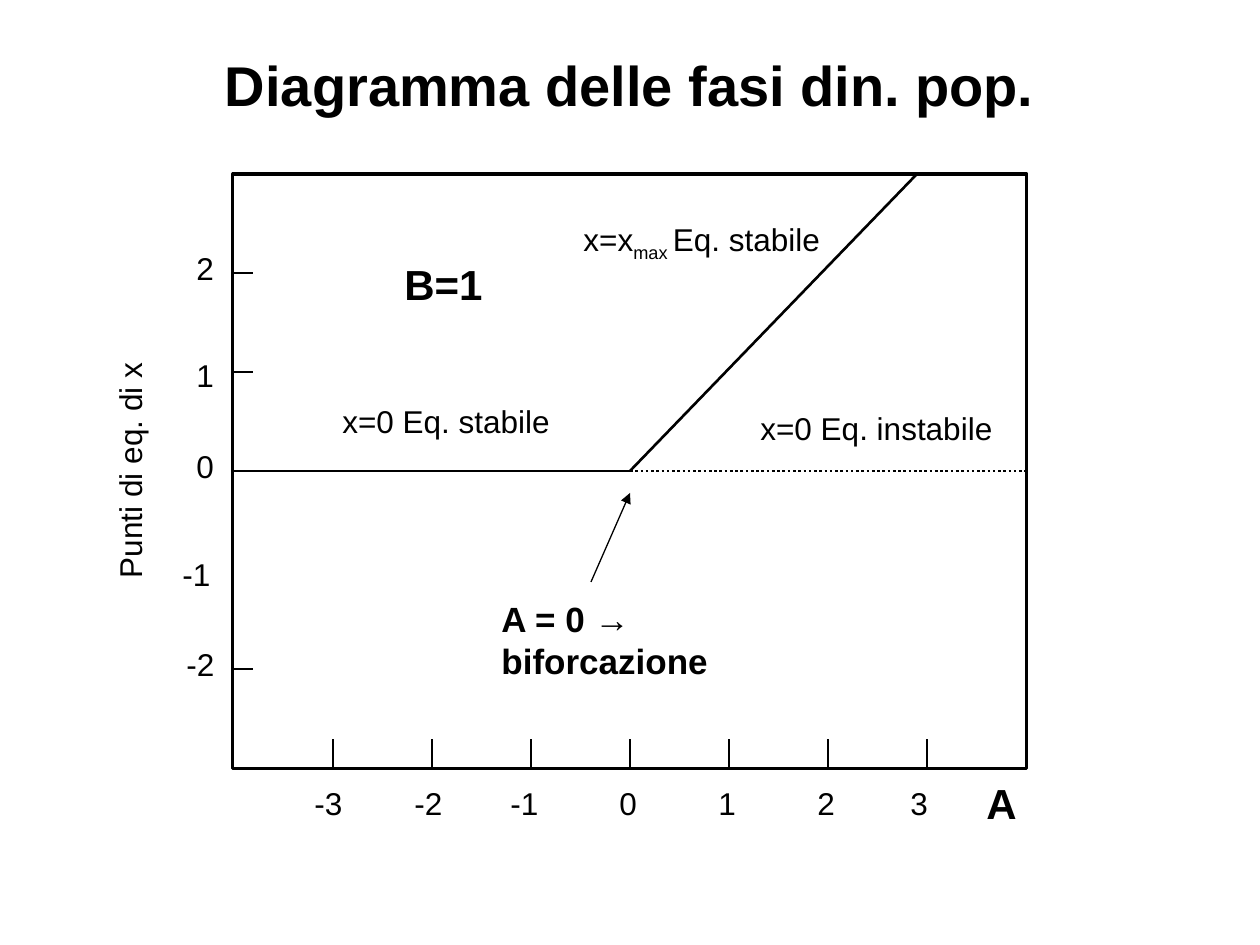
from dataclasses import dataclass

from lxml import etree
from pptx import Presentation
from pptx.dml.color import RGBColor
from pptx.enum import dml, shapes, text
from pptx.oxml.ns import qn
from pptx.util import Emu, Pt

BLACK = RGBColor(0x00, 0x00, 0x00)
FONT = "Arial"
PX = 914400 / 126

LEFT, TOP, RIGHT, BOTTOM = 233, 174, 1027, 769
ORIGIN_X, ORIGIN_Y, UNIT = 630, 471, 99
X_TICK, Y_TICK = 30, 20


@dataclass(frozen=True)
class Label:
    words: str
    x: int
    y: int
    w: int
    h: int = 50
    size: int = 18
    bold: bool = False
    rotation: int = 0
    subscript: str = ""
    rest: str = ""


@dataclass(frozen=True)
class Line:
    x1: int
    y1: int
    x2: int
    y2: int
    width: float = 1.5
    dotted: bool = False
    arrow: bool = False


def px(n: int) -> Emu:
    return Emu(round(n * PX))


def add_run(p, words: str, size: int, bold: bool = False):
    r = p.add_run()
    r.text = words
    r.font.name = FONT
    r.font.size = Pt(size)
    r.font.bold = bold
    r.font.color.rgb = BLACK
    return r


def draw_label(s, label: Label) -> None:
    sp = s.shapes.add_textbox(px(label.x), px(label.y), px(label.w), px(label.h))
    sp.rotation = label.rotation
    tf = sp.text_frame
    tf.word_wrap = False
    tf.auto_size = text.MSO_AUTO_SIZE.SHAPE_TO_FIT_TEXT
    p = tf.paragraphs[0]
    add_run(p, label.words, label.size, label.bold)
    if label.subscript:
        r = add_run(p, label.subscript, label.size, label.bold)
        r.font._element.set("baseline", "-25000")
        add_run(p, label.rest, label.size, label.bold)


def draw_line(s, line: Line) -> None:
    sp = s.shapes.add_connector(
        shapes.MSO_CONNECTOR.STRAIGHT,
        px(line.x1), px(line.y1), px(line.x2), px(line.y2),
    )
    sp.line.color.rgb = BLACK
    sp.line.width = Pt(line.width)
    if line.dotted:
        sp.line.dash_style = dml.MSO_LINE.ROUND_DOT
    if line.arrow:
        etree.SubElement(sp.line._get_or_add_ln(), qn("a:tailEnd"), type="triangle")
    etree.SubElement(sp._element.spPr, qn("a:effectLst"))


def draw_title(s, words: str) -> None:
    sp = s.shapes.title
    sp.left, sp.top, sp.width, sp.height = px(63), px(16), px(1134), px(137)
    tf = sp.text_frame
    tf.vertical_anchor = text.MSO_ANCHOR.MIDDLE
    p = tf.paragraphs[0]
    p.alignment = text.PP_ALIGN.CENTER
    add_run(p, words, 32, True)


def draw_frame(s) -> None:
    sp = s.shapes.add_shape(
        shapes.MSO_SHAPE.RECTANGLE, px(LEFT), px(TOP), px(RIGHT - LEFT), px(BOTTOM - TOP)
    )
    sp.shadow.inherit = False
    sp.fill.background()
    sp.line.color.rgb = BLACK
    sp.line.width = Pt(1.75)


def tick_label(value: int, x: int, y: int) -> Label:
    return Label(str(value), x, y, 53 if value < 0 else 43)


X_LABELS = [
    tick_label(value, x, 778)
    for value, x in zip(range(-3, 4), (302, 402, 498, 607, 706, 805, 898))
]
Y_LABELS = [
    tick_label(2, 184, 243),
    tick_label(1, 184, 350),
    tick_label(0, 184, 441),
    tick_label(-1, 170, 549),
    tick_label(-2, 174, 639),
]
NOTES = [
    Label("B=1", 392, 252, 103, 63, 24, True),
    Label("A", 974, 771, 55, 63, 24, True),
    Label("Punti di eq. di x", 9, 445, 241, rotation=270),
    Label("A = 0 → biforcazione", 489, 591, 369, 54, 20, True),
    Label("x=0 Eq. stabile", 330, 396, 233),
    Label("x=0 Eq. instabile", 748, 403, 257),
    Label("x=x", 571, 214, 273, subscript="max ", rest="Eq. stabile"),
]
X_TICKS = [
    Line(ORIGIN_X + n * UNIT, BOTTOM, ORIGIN_X + n * UNIT, BOTTOM - X_TICK)
    for n in range(-3, 4)
]
Y_TICKS = [
    Line(LEFT, ORIGIN_Y - n * UNIT, LEFT + Y_TICK, ORIGIN_Y - n * UNIT)
    for n in (2, 1, 0, -2)
]
BRANCHES = [
    Line(LEFT, ORIGIN_Y, ORIGIN_X, ORIGIN_Y),
    Line(ORIGIN_X, ORIGIN_Y, 917, TOP),
    Line(ORIGIN_X, ORIGIN_Y, RIGHT, ORIGIN_Y, dotted=True),
    Line(591, 582, ORIGIN_X, 493, width=0.75, arrow=True),
]


def main() -> None:
    prs = Presentation()
    prs.slide_width, prs.slide_height = px(1260), px(945)
    s = prs.slides.add_slide(prs.slide_layouts[5])
    draw_title(s, "Diagramma delle fasi din. pop.")
    draw_frame(s)
    for line in X_TICKS + Y_TICKS + BRANCHES:
        draw_line(s, line)
    for label in X_LABELS + Y_LABELS + NOTES:
        draw_label(s, label)
    prs.save("out.pptx")


if __name__ == "__main__":
    main()
